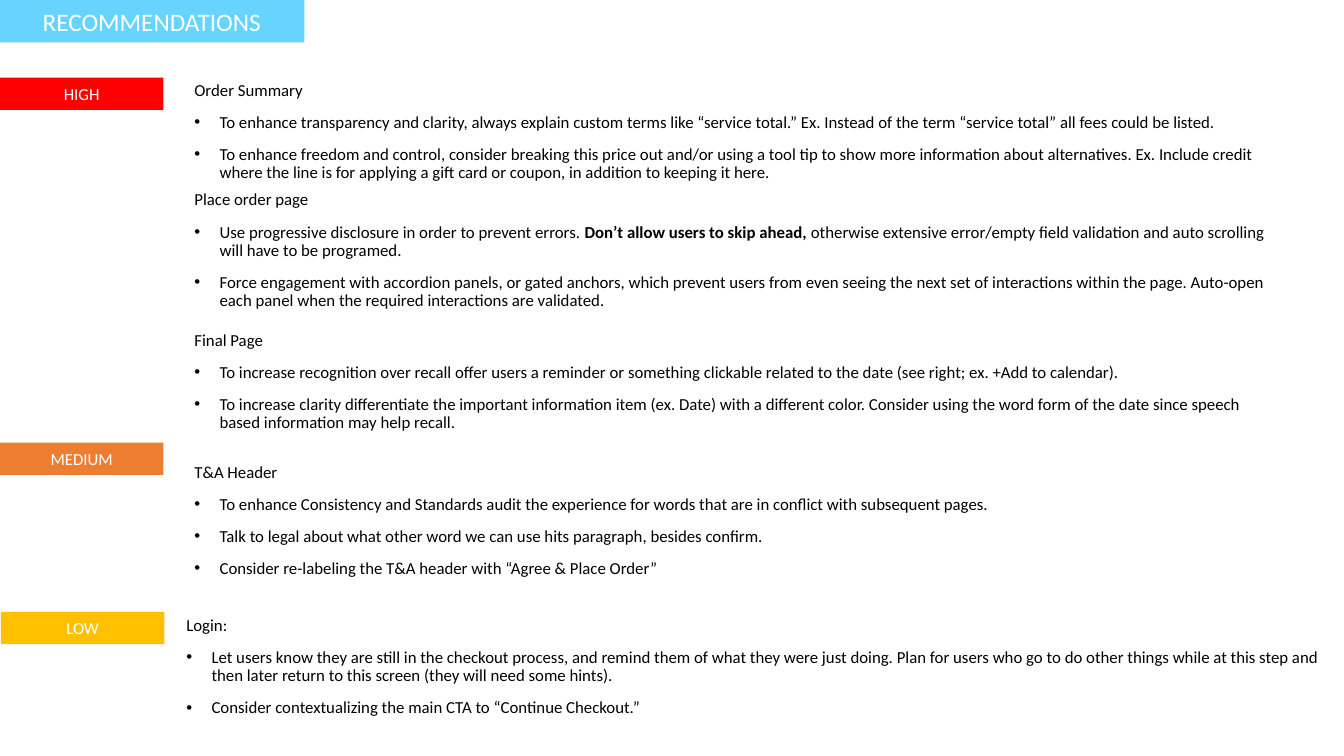
from lxml.etree import SubElement
from pptx import Presentation
from pptx.dml.color import RGBColor
from pptx.enum.shapes import MSO_SHAPE
from pptx.enum.text import MSO_ANCHOR, PP_ALIGN
from pptx.oxml.ns import qn
from pptx.util import Inches, Pt

COLORS = {
    "title": "67D4FF",
    "high": "FF0000",
    "medium": "ED7D31",
    "low": "FFC000",
    "label": "FFFFFF",
    "body": "000000",
}

LABELS = [
    ("RECOMMENDATIONS", "title", -0.01, 0, 3.03, 0.42, 18),
    ("HIGH", "high", 0, 0.77, 1.62, 0.32, 12),
    ("MEDIUM", "medium", 0, 4.39, 1.62, 0.32, 12),
    ("LOW", "low", 0.01, 6.07, 1.62, 0.32, 12),
]

SECTIONS = [
    ("Order Summary", 1.83, 0.76, 10.97, 1.16, [
        ["To enhance transparency and clarity, always explain custom terms like “service total.” "
         "Ex. Instead of the term “service total” all fees could be listed."],
        ["To enhance freedom and control, consider breaking this price out and/or using a tool tip "
         "to show more information about alternatives. Ex. Include credit where the line is for "
         "applying a gift card or coupon, in addition to keeping it here."],
    ]),
    ("Place order page", 1.83, 1.85, 10.97, 1.32, [
        ["Use progressive disclosure in order to prevent errors. ",
         "Don’t allow users to skip ahead,",
         " otherwise extensive error/empty field validation and auto scrolling will have to be "
         "programed."],
        ["Force engagement with accordion panels, or gated anchors, which prevent users from even "
         "seeing the next set of interactions within the page. Auto-open each panel when the "
         "required interactions are validated."],
    ]),
    ("Final Page", 1.83, 3.24, 10.97, 1.64, [
        ["To increase recognition over recall offer users a reminder or something clickable "
         "related to the date (see right; ex. +Add to calendar)."],
        ["To increase clarity differentiate the important information item (ex. Date) with a "
         "different color. Consider using the word form of the date since speech based "
         "information may help recall."],
    ]),
    ("T&A Header", 1.83, 4.55, 10.76, 1.64, [
        ["To enhance Consistency and Standards audit the experience for words that are in "
         "conflict with subsequent pages."],
        ["Talk to legal about what other word we can use hits paragraph, besides confirm."],
        ["Consider re-labeling the T&A header with “Agree & Place Order”"],
    ]),
    ("Login:", 1.75, 6.07, 11.47, 0.88, [
        ["Let users know they are still in the checkout process, and remind them of what they "
         "were just doing. Plan for users who go to do other things while at this step and then "
         "later return to this screen (they will need some hints)."],
        ["Consider contextualizing the main CTA to “Continue Checkout.”"],
    ]),
]


def set_font(paragraph, size, color):
    paragraph.font.name = "Calibri"
    paragraph.font.size = Pt(size)
    paragraph.font.color.rgb = RGBColor.from_string(COLORS[color])


def add_bullet(paragraph):
    properties = paragraph._p.get_or_add_pPr()
    properties.set("marL", str(Inches(0.25)))
    properties.set("indent", str(Inches(-0.25)))
    SubElement(properties, qn("a:buFont"), typeface="Arial")
    SubElement(properties, qn("a:buChar"), char="•")


presentation = Presentation()
presentation.slide_width = Inches(13.33)
presentation.slide_height = Inches(7.5)
slide = presentation.slides.add_slide(presentation.slide_layouts[6])

for wording, color, left, top, width, height, size in LABELS:
    label = slide.shapes.add_shape(
        MSO_SHAPE.RECTANGLE, Inches(left), Inches(top), Inches(width), Inches(height))
    label.shadow.inherit = False
    label.fill.solid()
    label.fill.fore_color.rgb = RGBColor.from_string(COLORS[color])
    label.line.fill.background()
    label.text_frame.vertical_anchor = MSO_ANCHOR.MIDDLE
    caption = label.text_frame.paragraphs[0]
    caption.text = wording
    caption.alignment = PP_ALIGN.CENTER
    set_font(caption, size, "label")

for heading, left, top, width, height, advices in SECTIONS:
    section = slide.shapes.add_textbox(
        Inches(left), Inches(top), Inches(width), Inches(height)).text_frame
    section.word_wrap = True
    for index, pieces in enumerate([[heading], *advices]):
        advice = section.add_paragraph() if index else section.paragraphs[0]
        advice.line_spacing = 0.9
        advice.space_before = Pt(10)
        if index:
            add_bullet(advice)
        set_font(advice, 12, "body")
        for position, piece in enumerate(pieces):
            run = advice.add_run()
            run.text = piece
            if position % 2:
                run.font.bold = True

presentation.save("out.pptx")
